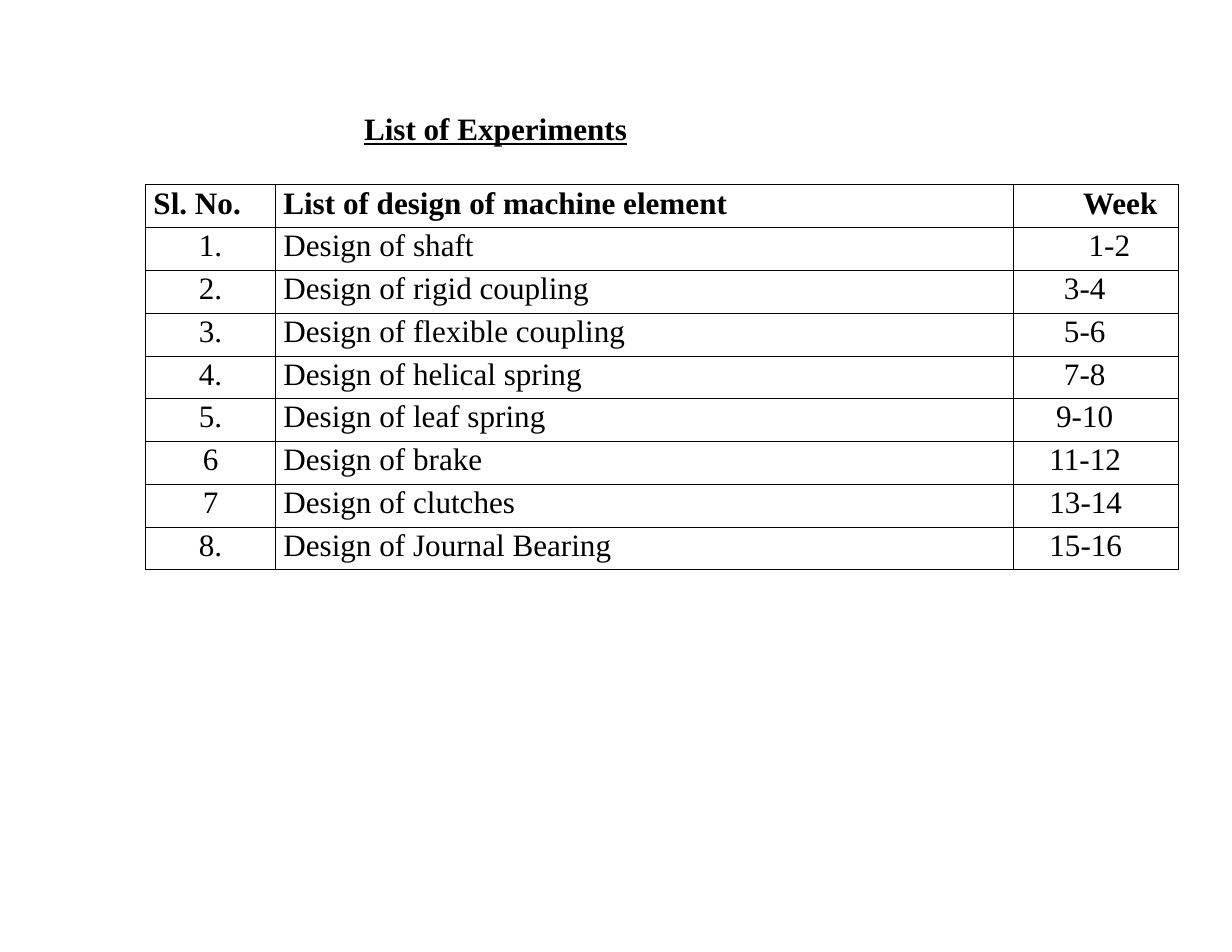
from dataclasses import dataclass

from lxml import etree
from pptx import Presentation
from pptx.dml.color import RGBColor
from pptx.enum import text
from pptx.oxml import ns
from pptx.util import Inches, Pt

COLORS = {"ink": "000000", "paper": "FFFFFF"}
FONT = "Times New Roman"
FONT_SIZE = 20
LINE_SPACING = 23.15
TEXT_INDENT = 0.07
COLUMN_WIDTHS = (1.16, 6.59, 1.47)
TABLE_LEFT, TABLE_TOP, TABLE_HEIGHT = 1.3, 1.65, 3.44


@dataclass
class Row:
    number: str
    element: str
    week: str
    week_indent: float
    header: bool = False


ROWS = [
    Row("Sl. No.", "List of design of machine element", "Week", 0.62, header=True),
    Row("1.", "Design of shaft", "1-2", 0.67),
    Row("2.", "Design of rigid coupling", "3-4", 0.45),
    Row("3.", "Design of flexible coupling", "5-6", 0.45),
    Row("4.", "Design of helical spring", "7-8", 0.45),
    Row("5.", "Design of leaf spring", "9-10", 0.38),
    Row("6", "Design of brake", "11-12", 0.32),
    Row("7", "Design of clutches", "13-14", 0.32),
    Row("8.", "Design of Journal Bearing", "15-16", 0.32),
]


def format_runs(p, bold: bool = False, underline: bool = False) -> None:
    for r in p.runs:
        r.font.name = FONT
        r.font.size = Pt(FONT_SIZE)
        r.font.bold = bold
        r.font.underline = underline
        r.font.color.rgb = RGBColor.from_string(COLORS["ink"])


def clear_margins(target) -> None:
    target.margin_left = target.margin_right = 0
    target.margin_top = target.margin_bottom = 0


def add_borders(cell) -> None:
    tc_pr = cell._tc.get_or_add_tcPr()
    for side in ("lnL", "lnR", "lnT", "lnB"):
        line = etree.SubElement(tc_pr, ns.qn(f"a:{side}"), w=str(Pt(0.5)))
        fill = etree.SubElement(line, ns.qn("a:solidFill"))
        etree.SubElement(fill, ns.qn("a:srgbClr"), val=COLORS["ink"])


def fill_cell(cell, value: str, bold: bool, indent: float, centered: bool) -> None:
    clear_margins(cell)
    add_borders(cell)
    cell.fill.background()
    cell.text_frame.text = value
    p = cell.text_frame.paragraphs[0]
    p.alignment = text.PP_ALIGN.CENTER if centered else text.PP_ALIGN.LEFT
    p.line_spacing = Pt(LINE_SPACING)
    p._p.get_or_add_pPr().set("marL", str(Inches(indent)))
    format_runs(p, bold)


def add_title(slide) -> None:
    title = slide.shapes.title
    title.left, title.top = Inches(3.24), Inches(0.97)
    title.width, title.height = Inches(2.5), Inches(0.36)
    tf = title.text_frame
    tf.text = "List of Experiments"
    clear_margins(tf)
    tf.margin_top = Inches(0.01)
    tf.word_wrap = True
    tf.auto_size = text.MSO_AUTO_SIZE.NONE
    tf.vertical_anchor = text.MSO_ANCHOR.TOP
    p = tf.paragraphs[0]
    p.alignment = text.PP_ALIGN.LEFT
    p.space_before = Pt(1)
    p._p.get_or_add_pPr().set("marL", str(Inches(0.01)))
    format_runs(p, bold=True, underline=True)


def add_experiment_table(slide, rows: list[Row]) -> None:
    table = slide.shapes.add_table(
        len(rows), len(COLUMN_WIDTHS), Inches(TABLE_LEFT), Inches(TABLE_TOP),
        Inches(sum(COLUMN_WIDTHS)), Inches(TABLE_HEIGHT),
    ).table
    table.first_row = table.horz_banding = False
    for column, width in zip(table.columns, COLUMN_WIDTHS):
        column.width = Inches(width)
    for i, row in enumerate(rows):
        number_indent = TEXT_INDENT if row.header else 0
        fill_cell(table.cell(i, 0), row.number, row.header, number_indent, not row.header)
        fill_cell(table.cell(i, 1), row.element, row.header, TEXT_INDENT, False)
        fill_cell(table.cell(i, 2), row.week, row.header, row.week_indent, False)


def main() -> None:
    prs = Presentation()
    prs.slide_width, prs.slide_height = Inches(11), Inches(8.5)
    slide = prs.slides.add_slide(prs.slide_layouts.get_by_name("Title Only"))
    slide.background.fill.solid()
    slide.background.fill.fore_color.rgb = RGBColor.from_string(COLORS["paper"])
    add_title(slide)
    add_experiment_table(slide, ROWS)
    prs.save("out.pptx")


if __name__ == "__main__":
    main()
